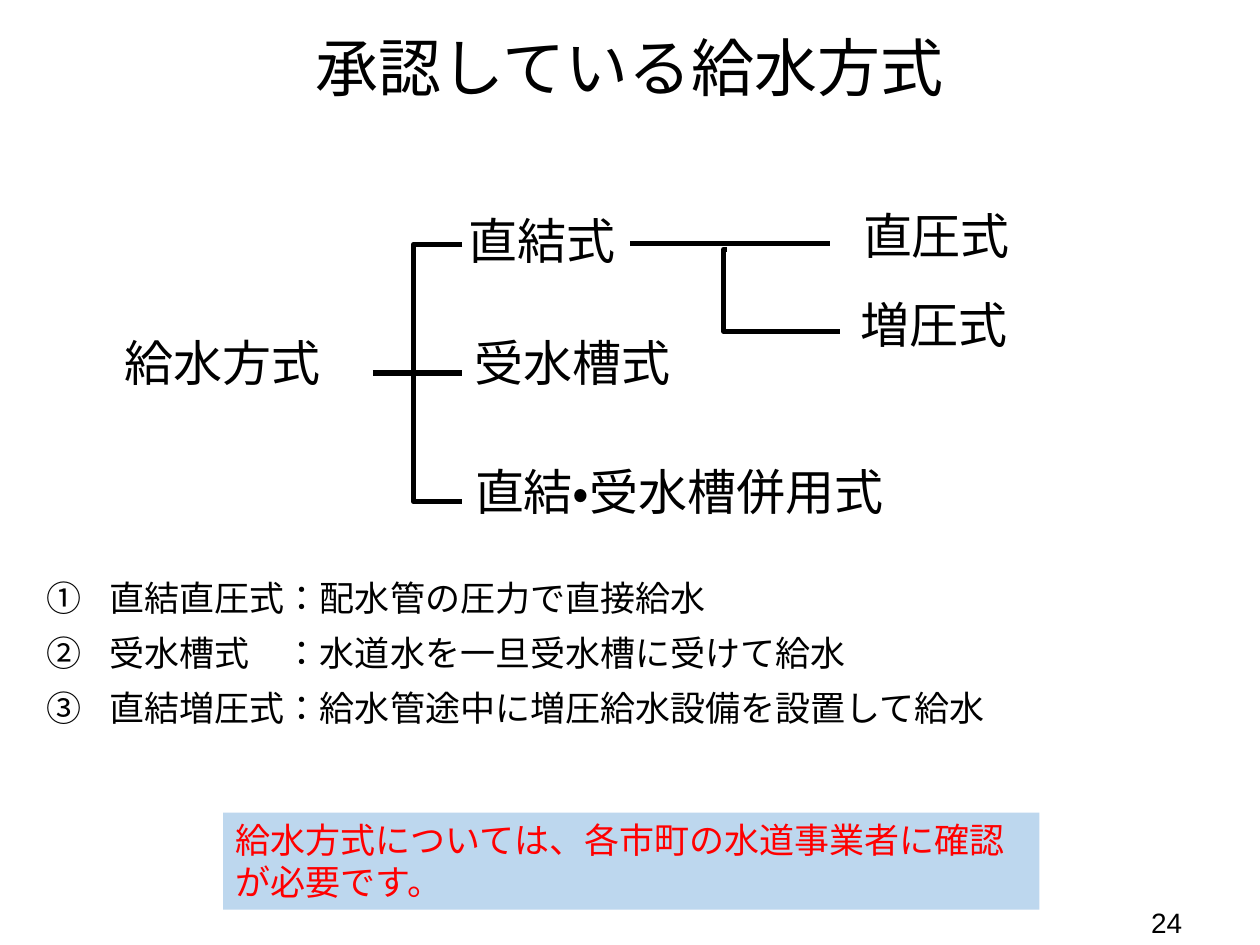
from dataclasses import dataclass

from lxml.etree import SubElement
from pptx import Presentation
from pptx.dml.color import RGBColor
from pptx.enum.lang import MSO_LANGUAGE_ID as Lang
from pptx.enum.shapes import MSO_CONNECTOR as Connector, MSO_SHAPE as Shape
from pptx.enum.text import MSO_ANCHOR as Anchor, MSO_AUTO_SIZE as AutoSize, PP_ALIGN as Align
from pptx.oxml.ns import qn
from pptx.util import Inches, Pt


@dataclass(frozen=True)
class Theme:
    font: str = "Arial"
    ink: RGBColor = RGBColor(0, 0, 0)
    paper: RGBColor = RGBColor(255, 255, 255)
    notice_fill: RGBColor = RGBColor(0xBD, 0xD7, 0xEE)
    notice_text: RGBColor = RGBColor(255, 0, 0)
    title: int = 36
    node: int = 28
    body: int = 20
    number: int = 16
    rule: float = 3
    edge: float = 1.5


THEME = Theme()

# Tree nodes: text, left, top, width, height, filled
MAIN_NODES = [
    ("直結式", 3.64, 1.66, 2.33, 0.71, True),
    ("受水槽式", 3.69, 2.63, 2.66, 0.72, False),
    ("直結・受水槽併用式", 3.69, 3.65, 5.01, 0.67, True),
    ("給水方式", 0.91, 2.63, 2.05, 0.73, True),
]
DIRECT_NODES = [
    ("直圧式", 6.77, 1.62, 2.33, 0.71, True),
    ("増圧式", 6.75, 2.33, 2.33, 0.71, True),
]
EXPLANATIONS = [
    "直結直圧式：配水管の圧力で直接給水",
    "受水槽式　：水道水を一旦受水槽に受けて給水",
    "直結増圧式：給水管途中に増圧給水設備を設置して給水",
]


def apply(target, values):
    for name, value in values.items():
        setattr(target, name, value)


def place(shape, left, top, width, height):
    apply(shape, {"left": Inches(left), "top": Inches(top),
                  "width": Inches(width), "height": Inches(height)})


def write(shape, lines, size, color=THEME.ink, frame=None, para_format=None):
    """Fill a text frame, one paragraph a line, and return the paragraphs."""
    box = shape.text_frame
    apply(box, {"word_wrap": True, "auto_size": AutoSize.NONE,
                "vertical_anchor": Anchor.TOP, **(frame or {})})
    for index, line in enumerate(lines):
        para = box.add_paragraph() if index else box.paragraphs[0]
        apply(para, para_format or {})
        span = para.add_run()
        span.text = line
        apply(span.font, {"name": THEME.font, "size": Pt(size),
                          "language_id": Lang.JAPANESE})
        span.font.color.rgb = color
    return box.paragraphs


def add_rectangle(page, area, fill=None, edge=None):
    box = page.shapes.add_shape(Shape.RECTANGLE, *map(Inches, area))
    box.shadow.inherit = False
    if fill is None:
        box.fill.background()
    else:
        box.fill.solid()
        box.fill.fore_color.rgb = fill
    if edge is None:
        box.line.fill.background()
    else:
        box.line.color.rgb = edge
        box.line.width = Pt(THEME.edge)
    return box


def add_node(page, text, *area, filled):
    box = add_rectangle(page, area, THEME.paper if filled else None, THEME.paper)
    margins = {"margin_left": Inches(0.08), "margin_right": Inches(0.08),
               "margin_top": Inches(0.01), "margin_bottom": Inches(0.01)}
    write(box, [text], THEME.node, frame=margins,
          para_format={"alignment": Align.JUSTIFY})


def draw_rule(shape):
    shape.line.color.rgb = THEME.ink
    shape.line.width = Pt(THEME.rule)


def add_link(page, start, end, kind=Connector.STRAIGHT, bend=None):
    link = page.shapes.add_connector(kind, *map(Inches, (*start, *end)))
    draw_rule(link)
    properties = link._element.spPr
    SubElement(properties, qn("a:effectLst"))
    if bend is not None:
        guides = properties.find(qn("a:prstGeom")).get_or_add_avLst()
        SubElement(guides, qn("a:gd"), name="adj1", fmla=f"val {round(bend * 100000)}")


def add_bracket(page, left, right, top, bottom):
    points = [(Inches(x), Inches(y)) for x, y in
              ((right, top), (left, top), (left, bottom), (right, bottom))]
    builder = page.shapes.build_freeform(*points[0])
    builder.add_line_segments(points[1:], close=False)
    bracket = builder.convert_to_shape()
    bracket.shadow.inherit = False
    bracket.fill.background()
    draw_rule(bracket)


def number_paragraph(para):
    properties = para._p.get_or_add_pPr()
    properties.set("marL", str(Inches(0.5)))
    properties.set("indent", str(-Inches(0.5)))
    SubElement(properties, qn("a:buFont"), typeface="+mj-lt")
    SubElement(properties, qn("a:buAutoNum"), type="circleNumDbPlain")


def add_title(page):
    title = page.shapes.title
    place(title, 0.72, 0.18, 8.55, 0.73)
    write(title, ["承認している給水方式"], THEME.title,
          para_format={"alignment": Align.CENTER, "space_before": Pt(10)})


def add_tree(page):
    for *node, filled in MAIN_NODES:
        add_node(page, *node, filled=filled)
    add_bracket(page, left=3.28, right=3.67, top=1.94, bottom=3.98)
    add_link(page, (2.96, 2.96), (3.67, 2.96))
    for *node, filled in DIRECT_NODES:
        add_node(page, *node, filled=filled)
    add_link(page, (5, 1.93), (6.59, 1.93))
    add_link(page, (5.77, 1.98), (6.67, 2.63), Connector.ELBOW, bend=-0.03)


def add_explanations(page):
    body = page.placeholders[1]
    place(body, 0.27, 4.56, 9.45, 1.53)
    for para in write(body, EXPLANATIONS, THEME.body,
                      para_format={"line_spacing": 0.9, "space_before": Pt(10)}):
        number_paragraph(para)


def add_notice(page):
    notice = add_rectangle(page, (1.77, 6.45, 6.48, 0.77), THEME.notice_fill)
    write(notice, ["給水方式については、各市町の水道事業者に確認が必要です。"],
          THEME.body, THEME.notice_text, para_format={"alignment": Align.LEFT})


def add_page_number(page):
    number = page.shapes.add_textbox(*map(Inches, (7.23, 7.12, 2.25, 0.4)))
    write(number, ["24"], THEME.number, frame={"vertical_anchor": Anchor.MIDDLE},
          para_format={"alignment": Align.RIGHT})


def main():
    deck = Presentation()
    apply(deck, {"slide_width": Inches(10), "slide_height": Inches(7.5)})
    page = deck.slides.add_slide(deck.slide_layouts[1])
    # Heading and tree of supply methods
    add_title(page)
    add_tree(page)
    # Explanations, notice and page number
    add_explanations(page)
    add_notice(page)
    add_page_number(page)
    deck.save("out.pptx")


if __name__ == "__main__":
    main()
